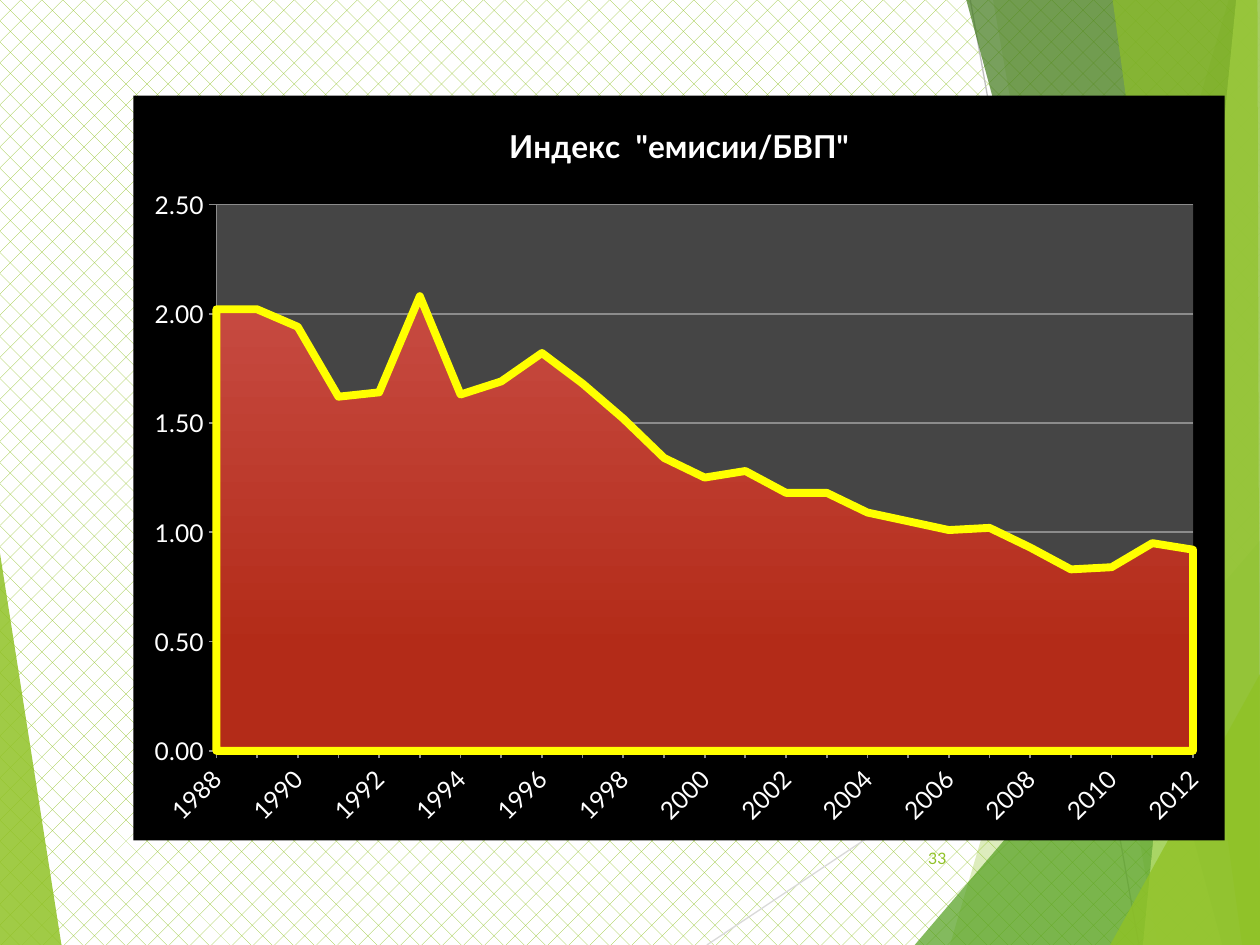
from lxml.etree import fromstring
from pptx import Presentation
from pptx.chart.data import CategoryChartData
from pptx.dml.color import RGBColor
from pptx.enum.chart import XL_CHART_TYPE as ChartType, XL_TICK_MARK as Tick
from pptx.enum.dml import MSO_PATTERN as Pattern
from pptx.enum.shapes import MSO_CONNECTOR as Connector
from pptx.enum.text import MSO_ANCHOR as Anchor, PP_ALIGN as Align
from pptx.oxml.ns import nsdecls, qn
from pptx.oxml.xmlchemy import OxmlElement
from pptx.util import Cm, Pt

# Content
FONT = "Lato"
TITLE = 'Индекс  "емисии/БВП"'
PAGE_NUMBER = "33"
YEARS = [str(year) for year in range(1988, 2013)]
INDEX = [2.02, 2.02, 1.94, 1.62, 1.64, 2.08, 1.63, 1.69, 1.82, 1.68, 1.52, 1.34, 1.25,
         1.28, 1.18, 1.18, 1.09, 1.05, 1.01, 1.02, 0.93, 0.83, 0.84, 0.95, 0.92]
COLORS = {
    "white": "FFFFFF", "black": "000000", "plot": "454545", "axis": "8C8C8C",
    "area_top": "C74B42", "area_bottom": "B32B18", "outline": "FFFF00",
    "lime": "90C226", "green": "54A021", "forest": "3F7819", "pale": "C0E474",
    "light_line": "D9D9D9", "mid_line": "BFBFBF",
}

# Decoration, in centimetres
WIDTH, HEIGHT = 25.4, 19.05
RAYS = [  # start, end, colour
    ((14.25, HEIGHT), (WIDTH, 11.61), "light_line"),
    ((19.56, 0), (22.96, HEIGHT), "mid_line"),
]


def band(top, bottom):
    """Outline between a slanted left edge and the right side of the slide."""
    return [(top, 0), (bottom, HEIGHT), (WIDTH, HEIGHT), (WIDTH, 0)]


def corner(left, top):
    """Triangle in the bottom right corner."""
    return [(left, HEIGHT), (WIDTH, top), (WIDTH, HEIGHT)]


FACETS = [  # outline, colour, opacity in percent
    ([(0, 11.15), (1.24, HEIGHT), (0, HEIGHT)], "lime", 85),
    (band(24.77, 19.15), "lime", 30),
    (band(20.02, 23.34), "lime", 20),
    (corner(18.44, 10.9), "green", 72),
    (band(19.48, 24.64), "forest", 70),
    (band(24.92, 23.04), "pale", 70),
    ([(22.43, 0), (25.04, HEIGHT), (WIDTH, HEIGHT), (25.35, 0)], "lime", 65),
    (corner(22.38, 13.59), "lime", 80),
]


def rgb(name):
    return RGBColor.from_string(COLORS[name])


def set_line(line, color, width):
    line.color.rgb = rgb(color)
    line.width = Pt(width)


def set_font(font, size, color, bold=False):
    font.name, font.size, font.bold = FONT, Pt(size), bold
    font.color.rgb = rgb(color)


def add_text(page, text, left, top, width, height, size, color, align):
    box = page.shapes.add_textbox(Cm(left), Cm(top), Cm(width), Cm(height))
    frame = box.text_frame
    frame.word_wrap = True
    frame.vertical_anchor = Anchor.MIDDLE
    para = frame.paragraphs[0]
    para.alignment = align
    span = para.add_run()
    span.text = text
    set_font(span.font, size, color)


def add_facet(page, outline, color, opacity):
    points = [(Cm(x), Cm(y)) for x, y in outline]
    builder = page.shapes.build_freeform(*points[0])
    builder.add_line_segments(points[1:], close=True)
    shape = builder.convert_to_shape()
    shape.shadow.inherit = False
    shape.line.fill.background()
    shape.fill.solid()
    shape.fill.fore_color.rgb = rgb(color)
    alpha = OxmlElement("a:alpha")
    alpha.set("val", str(opacity * 1000))
    shape._element.spPr.find(".//" + qn("a:srgbClr")).append(alpha)


def add_ray(page, start, end, color):
    ray = page.shapes.add_connector(Connector.STRAIGHT, *map(Cm, start + end))
    set_line(ray.line, color, 0.75)
    ray._element.spPr.append(OxmlElement("a:effectLst"))


def area_fill(color):
    return fromstring(f'<c:spPr {nsdecls("c", "a")}><a:solidFill><a:srgbClr val="{COLORS[color]}"/>'
                      '</a:solidFill><a:ln><a:noFill/></a:ln></c:spPr>')


def place_plot(plot_area, **position):
    old = plot_area.find(qn("c:layout"))
    if old is not None:
        plot_area.remove(old)
    sizes = "".join(f'<c:{key} val="{value}"/>' for key, value in position.items())
    plot_area.insert(0, fromstring(
        f'<c:layout {nsdecls("c")}><c:manualLayout><c:layoutTarget val="inner"/>'
        f'<c:xMode val="edge"/><c:yMode val="edge"/>{sizes}</c:manualLayout></c:layout>'))


def add_index_chart(page):
    data = CategoryChartData(number_format="0.00")
    data.categories = YEARS
    data.add_series(TITLE, INDEX)
    chart = page.shapes.add_chart(ChartType.AREA, Cm(2.69), Cm(1.93), Cm(22), Cm(15.01), data).chart
    set_font(chart.font, 10, "black")
    chart.has_legend = False
    chart.has_title = True
    frame = chart.chart_title.text_frame
    frame.text = TITLE
    set_font(frame.paragraphs[0].runs[0].font, 18, "white", bold=True)
    chart.chart_title.include_in_layout = False

    # Series
    chart.plots[0].vary_by_categories = False
    style = chart.plots[0].series[0].format
    style.fill.gradient()
    style.fill.gradient_angle = 270
    for stop, color, position in zip(style.fill.gradient_stops, ("area_top", "area_bottom"), (0, 0.78)):
        stop.color.rgb = rgb(color)
        stop.position = position
    set_line(style.line, "outline", 4.5)

    # Axes
    years, values = chart.category_axis, chart.value_axis
    for axis in (years, values):
        axis.major_tick_mark, axis.minor_tick_mark = Tick.OUTSIDE, Tick.NONE
        set_font(axis.tick_labels.font, 14, "white")
        set_line(axis.format.line, "axis", 1)
    years.has_major_gridlines = False
    values.has_major_gridlines = True
    set_line(values.major_gridlines.format.line, "axis", 1)
    values.minimum_scale, values.maximum_scale, values.major_unit = 0, 2.5, 0.5
    values.tick_labels.number_format = "0.00"
    values.tick_labels.number_format_is_linked = False
    values._element.find(qn("c:crossBetween")).set("val", "midCat")
    years._element.find(qn("c:txPr")).find(qn("a:bodyPr")).set("rot", "-2700000")
    skip = OxmlElement("c:tickLblSkip")
    skip.set("val", "2")
    years._element.find(qn("c:noMultiLvlLbl")).addprevious(skip)

    # Backgrounds and plot position
    body = chart._chartSpace.find(qn("c:chart"))
    body.addnext(area_fill("black"))
    plot_area = body.find(qn("c:plotArea"))
    plot_area.append(area_fill("plot"))
    place_plot(plot_area, x=0.076, y=0.146, w=0.895, h=0.734)


def main():
    deck = Presentation()
    deck.slide_width, deck.slide_height = Cm(WIDTH), Cm(HEIGHT)
    page = deck.slides.add_slide(deck.slide_layouts[6])

    # Patterned background
    fill = page.background.fill
    fill.patterned()
    fill.pattern = Pattern.DOTTED_DIAMOND
    fill.fore_color.rgb, fill.back_color.rgb = rgb("lime"), rgb("white")

    # Decoration: left wedge, rays, then the right-hand facets
    add_facet(page, *FACETS[0])
    for ray in RAYS:
        add_ray(page, *ray)
    for facet in FACETS[1:]:
        add_facet(page, *facet)

    add_text(page, PAGE_NUMBER, 17.91, 16.79, 1.42, 1.02, size=9, color="lime", align=Align.RIGHT)
    add_index_chart(page)
    deck.save("out.pptx")


if __name__ == "__main__":
    main()
